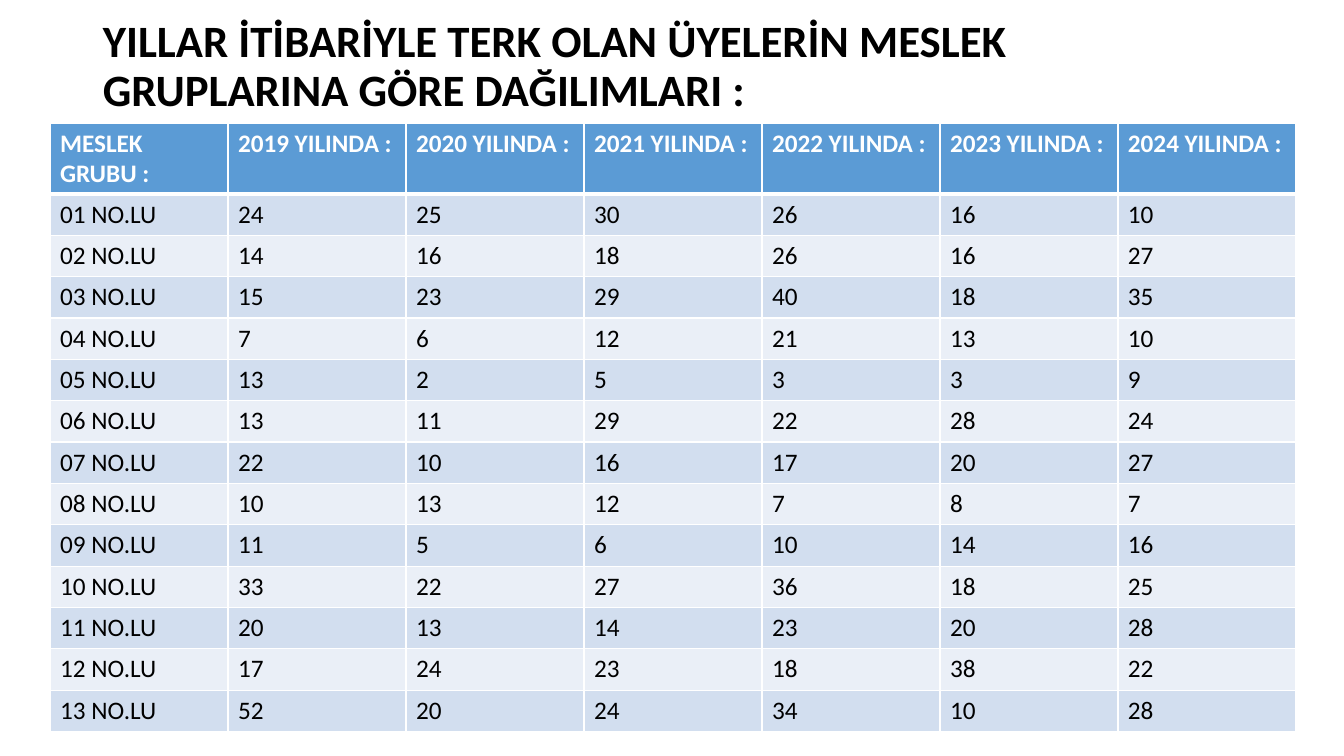
from lxml.etree import SubElement
from pptx import Presentation
from pptx.dml.color import RGBColor
from pptx.enum.text import MSO_ANCHOR as Anchor
from pptx.oxml.ns import qn
from pptx.util import Pt

PX = 12192000 / 1344
BLACK = RGBColor(0x00, 0x00, 0x00)
WHITE = RGBColor(0xFF, 0xFF, 0xFF)
BLUE = RGBColor(0x5B, 0x9B, 0xD5)
BAND_DARK = RGBColor(0xD2, 0xDE, 0xEF)
BAND_LIGHT = RGBColor(0xEA, 0xEF, 0xF7)

TITLE = "YILLAR İTİBARİYLE TERK OLAN ÜYELERİN MESLEK GRUPLARINA GÖRE DAĞILIMLARI :"
YEARS = range(2019, 2025)
LEAVERS = [
    (24, 25, 30, 26, 16, 10),
    (14, 16, 18, 26, 16, 27),
    (15, 23, 29, 40, 18, 35),
    (7, 6, 12, 21, 13, 10),
    (13, 2, 5, 3, 3, 9),
    (13, 11, 29, 22, 28, 24),
    (22, 10, 16, 17, 20, 27),
    (10, 13, 12, 7, 8, 7),
    (11, 5, 6, 10, 14, 16),
    (33, 22, 27, 36, 18, 25),
    (20, 13, 14, 23, 20, 28),
    (17, 24, 23, 18, 38, 22),
    (52, 20, 24, 34, 10, 28),
]


def px(length):
    return round(length * PX)


def write(frame, text, size, color, bold):
    run = frame.paragraphs[0].add_run()
    run.text = text
    run.font.color.rgb = color
    for key, value in {"name": "Calibri", "size": Pt(size), "bold": bold}.items():
        setattr(run.font, key, value)


prs = Presentation()
prs.slide_width, prs.slide_height = px(1344), px(756)
slide = prs.slides.add_slide(prs.slide_layouts[6])

# Title
title = slide.shapes.add_textbox(px(93), px(12), px(1159), px(111)).text_frame
title.word_wrap = True
title.vertical_anchor = Anchor.MIDDLE
title.paragraphs[0].line_spacing = 0.9
write(title, TITLE, 32, BLACK, True)

# Table contents: header row, then one row per occupational group
rows = [["MESLEK GRUBU :"] + [f"{year} YILINDA :" for year in YEARS]]
for number, counts in enumerate(LEAVERS, 1):
    rows.append([f"{number:02} NO.LU", *counts])

# Table grid
COLUMN, HEADER, BODY = 178, 71, 538
groups = slide.shapes.add_table(
    len(rows), len(rows[0]), px(50), px(123),
    px(COLUMN * len(rows[0])), px(HEADER + BODY)).table
groups.first_row = groups.horz_banding = False
for column in groups.columns:
    column.width = px(COLUMN)

# Cells with white borders, the one under the header thicker
for r, values in enumerate(rows):
    is_header = r == 0
    groups.rows[r].height = px(HEADER if is_header else BODY / len(LEAVERS))
    fill = BLUE if is_header else BAND_DARK if r % 2 else BAND_LIGHT
    borders = {"a:lnL": 1, "a:lnR": 1,
               "a:lnT": 3 if r == 1 else 1, "a:lnB": 3 if is_header else 1}
    for c, value in enumerate(values):
        cell = groups.cell(r, c)
        write(cell.text_frame, str(value), 18, WHITE if is_header else BLACK, is_header)
        properties = cell._tc.get_or_add_tcPr()
        for side, width in borders.items():
            line = SubElement(properties, qn(side), w=str(Pt(width)))
            SubElement(SubElement(line, qn("a:solidFill")), qn("a:srgbClr"), val=str(WHITE))
        cell.fill.solid()
        cell.fill.fore_color.rgb = fill

prs.save("out.pptx")
